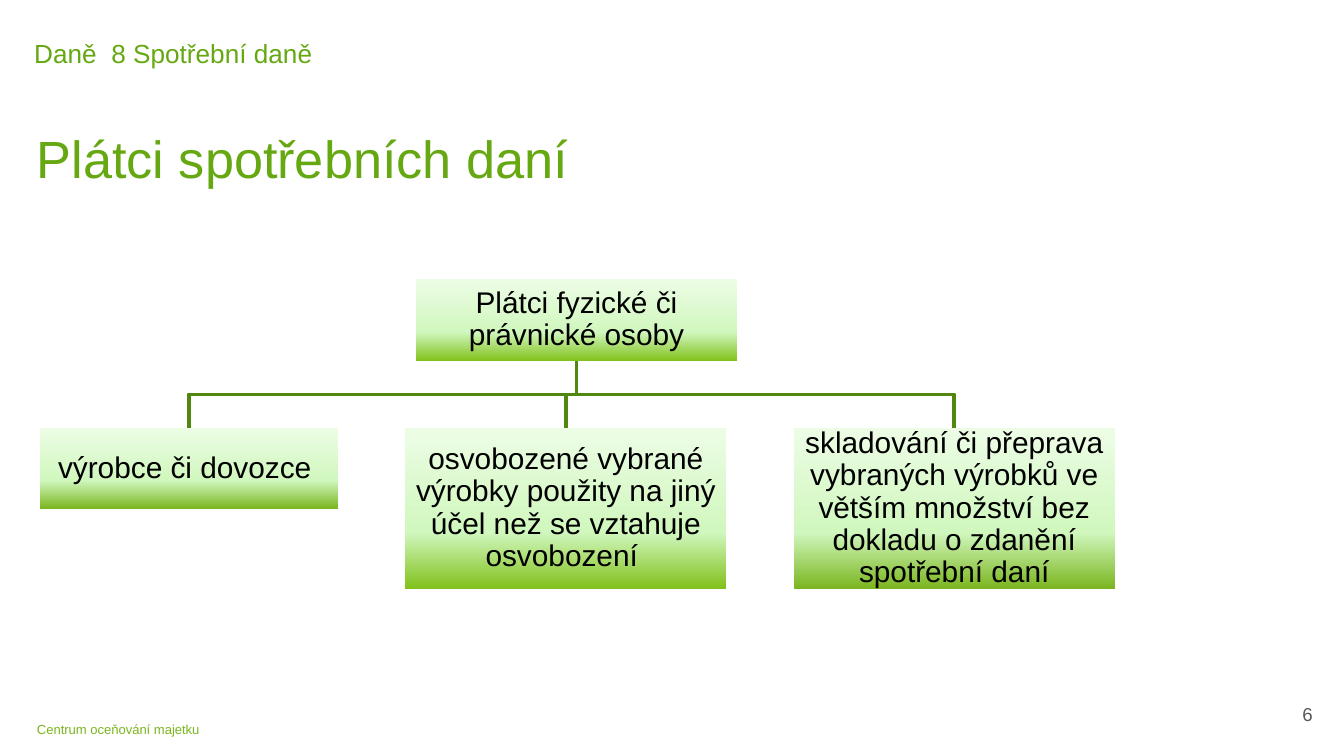
from copy import deepcopy
from dataclasses import dataclass

from pptx import Presentation
from pptx.dml.color import RGBColor
from pptx.enum.shapes import MSO_SHAPE
from pptx.enum.text import MSO_ANCHOR, PP_ALIGN
from pptx.oxml.ns import qn
from pptx.util import Inches, Pt

RECT = MSO_SHAPE.RECTANGLE
TOP, MIDDLE = MSO_ANCHOR.TOP, MSO_ANCHOR.MIDDLE
LEFT, CENTER, RIGHT = PP_ALIGN.LEFT, PP_ALIGN.CENTER, PP_ALIGN.RIGHT

# Grid: ten cells to the inch, on a 16:9 slide
COLS, ROWS, CELL = 100, 56.25, 0.1
GREEN, LEAF, LIME = "65A812", "7BB620", "82C11C"
PALE, MIST, WIRE = "D0F7BE", "EDFDE5", "51870E"


@dataclass
class Label:
    text: str
    at: tuple  # column, row, columns wide, rows high
    size: float
    color: str
    pads: tuple  # left, top, right, bottom in cells
    align: int = LEFT
    anchor: int = TOP
    wrap: bool = True


@dataclass
class Node:
    text: str
    wide: float
    high: float
    base: str
    col: float = 0
    row: float = 0

    @property
    def mid(self) -> float:
        return self.col + self.wide / 2


def grid(*cells: float) -> list:
    return [Inches(cell * CELL) for cell in cells]


def paint(color: str) -> RGBColor:
    return RGBColor.from_string(color)


def apply(target, values: dict) -> None:
    for name, value in values.items():
        setattr(target, name, value)


def write(shape, label: Label) -> None:
    frame = shape.text_frame
    sides = ("left", "top", "right", "bottom")
    apply(frame, {f"margin_{side}": pad for side, pad in zip(sides, grid(*label.pads))})
    apply(frame, {"word_wrap": label.wrap, "vertical_anchor": label.anchor})
    para = frame.paragraphs[0]
    para.alignment = label.align
    run = para.add_run()
    run.text = label.text
    apply(run.font, {"name": "Arial", "size": Pt(label.size)})
    run.font.color.rgb = paint(label.color)


def draw_label(slide, label: Label) -> None:
    write(slide.shapes.add_textbox(*grid(*label.at)), label)


def fade(shape, base: str) -> None:
    """Fill upwards from the base colour to the palest one."""
    shape.fill.gradient()
    shape.fill.gradient_angle = 90
    stops = shape._element.spPr.find(qn("a:gradFill")).find(qn("a:gsLst"))
    stops.append(deepcopy(stops[-1]))
    marks = ((0, base), (0.35, PALE), (1, MIST))
    for stop, (place, color) in zip(shape.fill.gradient_stops, marks):
        stop.position = place
        stop.color.rgb = paint(color)


def draw_node(slide, node: Node) -> None:
    at = (node.col, node.row, node.wide, node.high)
    shape = slide.shapes.add_shape(RECT, *grid(*at))
    shape.shadow.inherit = False
    shape.line.fill.background()
    fade(shape, node.base)
    write(shape, Label(node.text, at, 16, "000000", (0.1,) * 4, CENTER, MIDDLE))
    shape.text_frame.paragraphs[0].line_spacing = 0.9


def draw_wire(slide, head: Node, leaf: Node) -> None:
    start = head.row + head.high
    bend = (start + leaf.row) / 2
    points = [grid(*point) for point in (
        (head.mid, start), (head.mid, bend), (leaf.mid, bend), (leaf.mid, leaf.row))]
    form = slide.shapes.build_freeform(*points[0])
    form.add_line_segments(points[1:], close=False)
    wire = form.convert_to_shape()
    wire.shadow.inherit = False
    wire.fill.background()
    wire.line.color.rgb = paint(WIRE)
    wire.line.width = Pt(2)


LABELS = [
    Label("6", (95, 51.4, 3.65, 3.5), 10, "585858", (1,) * 4, RIGHT, MIDDLE, False),
    Label("Daně  8 Spotřební daně", (1.3, 2.8, 82.7, 3.9), 14, GREEN,
          (1.25, 0, 1, 1)),
    Label("Plátci spotřebních daní", (2.75, 8.4, 82.7, 6.3), 28, GREEN, (0, 1, 1, 1)),
    Label("Centrum oceňování majetku", (2.75, 53.7, 12.3, 1.2), 7, LEAF, (0,) * 4,
          wrap=False),
]
HEAD = Node("Plátci fyzické či právnické osoby", 23.9, 6.1, LIME, 30.95, 20.75)
LEAVES = [
    Node("výrobce či dovozce ", 22.2, 6, LEAF),
    Node("osvobozené vybrané výrobky použity na jiný účel než se vztahuje osvobození ",
         23.9, 11.95, LIME),
    Node("skladování či přeprava vybraných výrobků ve větším množství bez dokladu "
         "o zdanění spotřební daní", 23.9, 11.95, LEAF),
]
EDGE, GAP, BASE = 2.95, 5, 31.85


def main() -> None:
    deck = Presentation()
    deck.slide_width, deck.slide_height = grid(COLS, ROWS)
    slide = deck.slides.add_slide(deck.slide_layouts[6])

    # Header, title, footer and page number
    for label in LABELS:
        draw_label(slide, label)

    # Place the lower row with equal gaps
    col = EDGE
    for leaf in LEAVES:
        leaf.col, leaf.row = col, BASE
        col += leaf.wide + GAP

    # Wires lie behind the boxes
    for leaf in reversed(LEAVES):
        draw_wire(slide, HEAD, leaf)
    for node in (HEAD, *LEAVES):
        draw_node(slide, node)

    deck.save("out.pptx")


if __name__ == "__main__":
    main()
